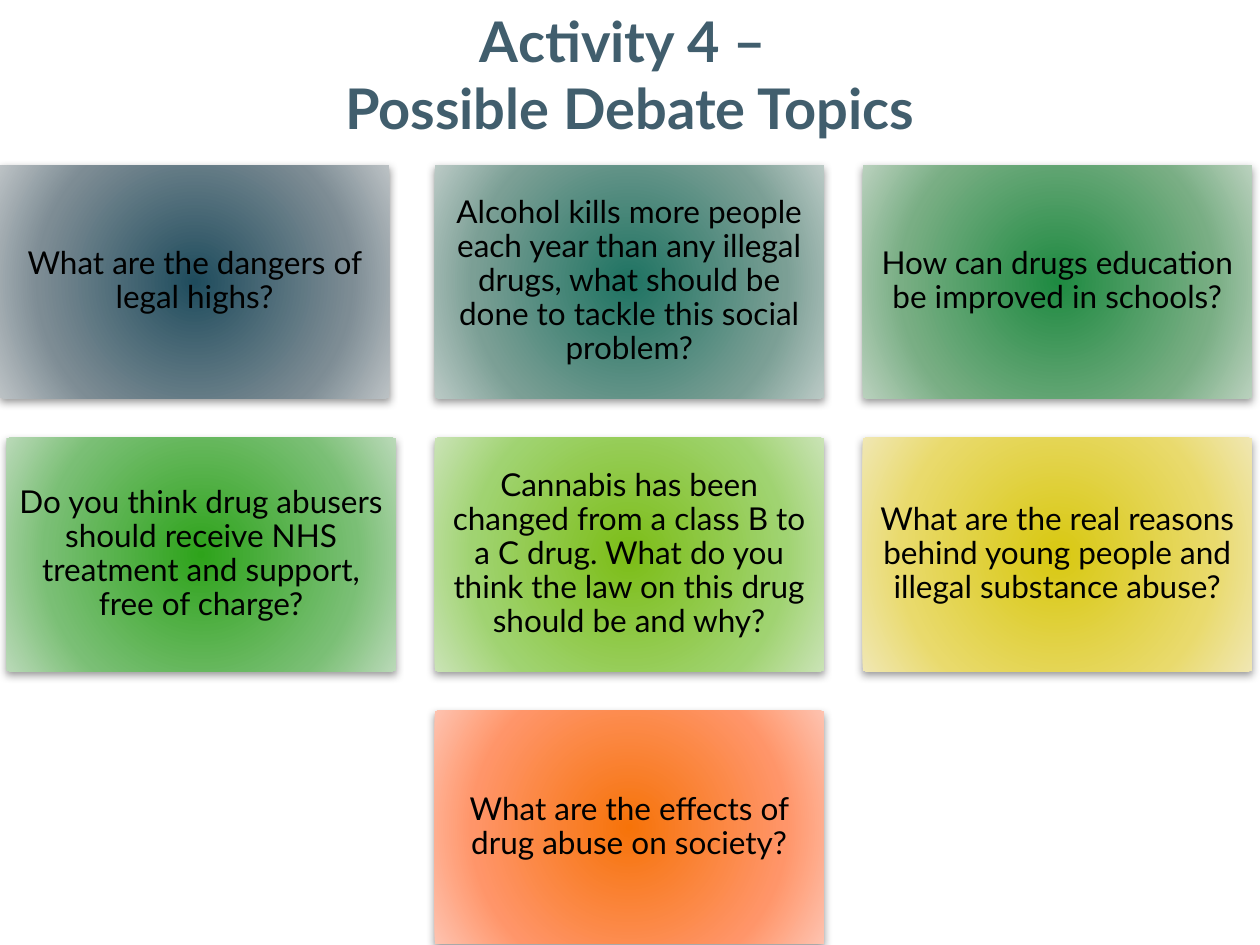
from lxml import etree
from pptx import Presentation
from pptx.dml.color import RGBColor
from pptx.enum.shapes import MSO_SHAPE
from pptx.enum.text import MSO_ANCHOR, PP_ALIGN
from pptx.oxml import parse_xml
from pptx.oxml.ns import qn
from pptx.util import Cm, Pt

RECT = MSO_SHAPE.RECTANGLE
CENTER = PP_ALIGN.CENTER
TOP, MIDDLE = MSO_ANCHOR.TOP, MSO_ANCHOR.MIDDLE
NS = "http://schemas.openxmlformats.org/drawingml/2006/main"

BLACK = RGBColor(0x00, 0x00, 0x00)
SLATE = RGBColor(0x41, 0x5E, 0x6D)
NAVY = (RGBColor(0x1F, 0x4C, 0x5D), RGBColor(0x7D, 0x8C, 0x94), RGBColor(0xBC, 0xC2, 0xC5))
TEAL = (RGBColor(0x1F, 0x73, 0x62), RGBColor(0x7B, 0x9F, 0x95), RGBColor(0xBB, 0xCA, 0xC6))
EMERALD = (RGBColor(0x1E, 0x8A, 0x41), RGBColor(0x79, 0xAE, 0x84), RGBColor(0xBA, 0xD1, 0xBE))
GREEN = (RGBColor(0x2E, 0xA3, 0x1B), RGBColor(0x7A, 0xBF, 0x75), RGBColor(0xBA, 0xD9, 0xB8))
LIME = (RGBColor(0x7C, 0xBD, 0x17), RGBColor(0xA0, 0xD3, 0x71), RGBColor(0xCA, 0xE3, 0xB6))
YELLOW = (RGBColor(0xD8, 0xC8, 0x11), RGBColor(0xE9, 0xDA, 0x6C), RGBColor(0xF0, 0xE7, 0xB3))
ORANGE = (RGBColor(0xF6, 0x73, 0x09), RGBColor(0xFF, 0x95, 0x69), RGBColor(0xFE, 0xC3, 0xB0))

CARD_W, CARD_H = 7.85, 4.7
GRID_LEFT, GRID_TOP = 0.13, 3.33
STEP_X, STEP_Y = 8.63, 5.5

TOPICS = [
    (0, 0, NAVY, "What are the dangers of legal highs?"),
    (1, 0, TEAL, "Alcohol kills more people each year than any illegal drugs, "
                 "what should be done to tackle this social problem?"),
    (2, 0, EMERALD, "How can drugs education be improved in schools?"),
    (0, 1, GREEN, "Do you think drug abusers should receive NHS treatment and support, "
                  "free of charge?"),
    (1, 1, LIME, "Cannabis has been changed from a class B to a C drug. "
                 "What do you think the law on this drug should be and why?"),
    (2, 1, YELLOW, "What are the real reasons behind young people and illegal substance abuse?"),
    (1, 2, ORANGE, "What are the effects of drug abuse on society?"),
]


class Deck:
    font = "Lato"
    title_size = Pt(32)
    card_size = Pt(18)
    inset = Cm(0.18)

    def __init__(self, prs):
        self.s = prs.slides.add_slide(prs.slide_layouts[5])

    def style(self, p, size, color, bold=False):
        p.alignment = CENTER
        p.font.name = self.font
        p.font.size = size
        p.font.bold = bold
        p.font.color.rgb = color

    def title(self, left, top, width, height, lines):
        sp = self.s.shapes.title
        sp.left, sp.top, sp.width, sp.height = Cm(left), Cm(top), Cm(width), Cm(height)
        tf = sp.text_frame
        tf.vertical_anchor = TOP
        tf.text = "\n".join(lines)
        for p in tf.paragraphs:
            self.style(p, self.title_size, SLATE, bold=True)

    def radial_fill(self, sp, colors):
        stops = "".join(
            f'<a:gs pos="{pos}"><a:srgbClr val="{color}"/></a:gs>'
            for pos, color in zip((0, 69000, 100000), colors)
        )
        sp.fill.background()
        blank = sp._element.spPr.find(qn("a:noFill"))
        blank.getparent().replace(blank, parse_xml(
            f'<a:gradFill xmlns:a="{NS}" rotWithShape="1"><a:gsLst>{stops}</a:gsLst>'
            '<a:path path="circle"><a:fillToRect l="100000" t="100000" '
            'r="100000" b="100000"/></a:path></a:gradFill>'
        ))

    def drop_shadow(self, sp):
        sp.shadow.inherit = False
        effects = sp._element.spPr.find(qn("a:effectLst"))
        shadow = etree.SubElement(
            effects, qn("a:outerShdw"), blurRad=str(Pt(5)), dist=str(Pt(2)),
            dir="5400000", algn="ctr", rotWithShape="0")
        color = etree.SubElement(shadow, qn("a:srgbClr"), val=str(BLACK))
        etree.SubElement(color, qn("a:alpha"), val="40000")

    def card(self, left, top, colors, text):
        sp = self.s.shapes.add_shape(RECT, Cm(left), Cm(top), Cm(CARD_W), Cm(CARD_H))
        self.radial_fill(sp, colors)
        sp.line.fill.background()
        self.drop_shadow(sp)
        tf = sp.text_frame
        tf.word_wrap = True
        tf.vertical_anchor = MIDDLE
        tf.margin_left = tf.margin_right = tf.margin_top = tf.margin_bottom = self.inset
        tf.text = text
        p = tf.paragraphs[0]
        p.line_spacing = 0.9
        self.style(p, self.card_size, BLACK)


def main():
    prs = Presentation()
    prs.slide_width, prs.slide_height = Cm(25.4), Cm(19.05)
    deck = Deck(prs)
    deck.title(5.1, 0, 15.2, 3, ["Activity 4 – ", "Possible Debate Topics"])
    for col, row, colors, text in TOPICS:
        left = 0 if (col, row) == (0, 0) else GRID_LEFT + col * STEP_X
        deck.card(left, GRID_TOP + row * STEP_Y, colors, text)
    prs.save("out.pptx")


if __name__ == "__main__":
    main()
